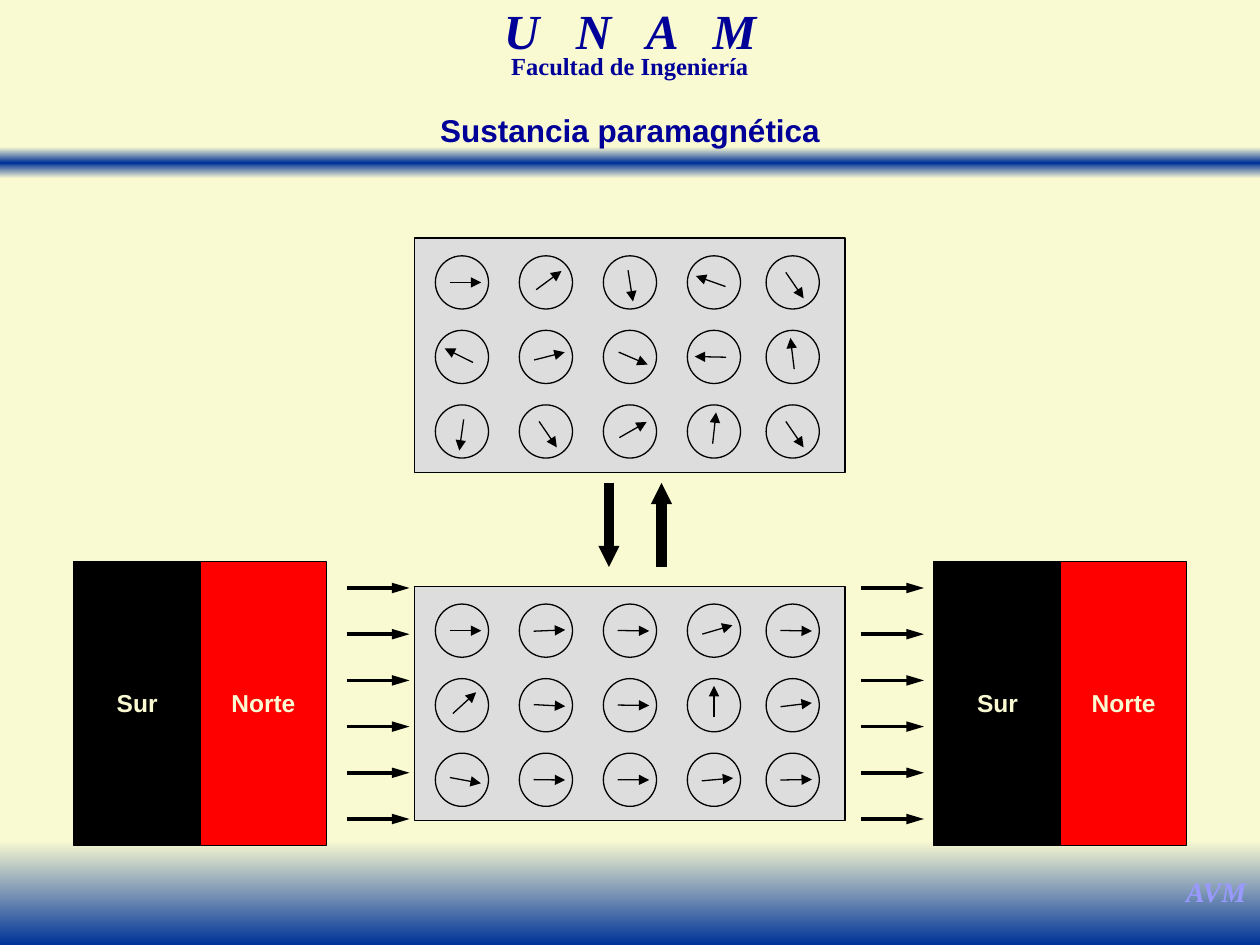
from copy import deepcopy
from math import cos, sin, radians
from lxml import etree
from pptx import Presentation
from pptx.dml.color import RGBColor as Rgb
from pptx.enum import shapes as kinds, text as txt
from pptx.oxml import ns
from pptx.util import Pt

HUE = {"cream": "FAFAD2", "blue": "003399", "navy": "000099", "lilac": "9999FF",
       "gray": "DDDDDD", "black": "000000", "red": "FF0000"}
RECT, OVAL = kinds.MSO_SHAPE.RECTANGLE, kinds.MSO_SHAPE.OVAL

deck = Presentation()
deck.slide_width, deck.slide_height = Pt(720), Pt(540)
slide = deck.slides.add_slide(deck.slide_layouts[6])
slide.background.fill.solid()
slide.background.fill.fore_color.rgb = Rgb.from_string(HUE["cream"])


def write(words, box, size, hue="navy", font="Times New Roman", slant=False,
          gap=None, pad=True, wrap=True):
    area = slide.shapes.add_textbox(*map(Pt, box))
    frame = area.text_frame
    frame.word_wrap = wrap
    if not pad:
        frame.margin_left = frame.margin_right = 0
        frame.margin_top = frame.margin_bottom = 0
    para = frame.paragraphs[0]
    para.alignment = txt.PP_ALIGN.CENTER
    if gap:
        para.line_spacing = gap
    run = para.add_run()
    run.text = words
    run.font.name, run.font.size = font, Pt(size)
    run.font.bold, run.font.italic = True, slant
    run.font.color.rgb = Rgb.from_string(HUE[hue])


def arrow(x1, y1, x2, y2, width=0.75, wide="med", long="med"):
    line = slide.shapes.add_connector(kinds.MSO_CONNECTOR.STRAIGHT,
                                      Pt(x1), Pt(y1), Pt(x2), Pt(y2))
    line.line.width = Pt(width)
    line.line.color.rgb = Rgb.from_string(HUE["black"])
    etree.SubElement(line.line._get_or_add_ln(), ns.qn("a:tailEnd"),
                     type="triangle", w=wide, len=long)
    etree.SubElement(line._element.spPr, ns.qn("a:effectLst"))


bands = [(84, 18, ["cream", "blue", "cream"]), (480, 60, ["cream", "blue"])]
for top, high, hues in bands:
    band = slide.shapes.add_shape(RECT, 0, Pt(top), Pt(720), Pt(high))
    band.shadow.inherit = False
    band.line.fill.background()
    band.fill.gradient()
    band.fill.gradient_angle = 270
    last = band._element.spPr.xpath(".//a:gs")[-1]
    for extra in hues[2:]:
        last.addnext(deepcopy(last))
    for i, stop in enumerate(band.fill.gradient_stops):
        stop.position = i / (len(hues) - 1)
        stop.color.rgb = Rgb.from_string(HUE[hues[i]])

write("U   N   A   M", (219, 6, 282, 31), 28, slant=True, gap=0.7)
write("Facultad de Ingeniería", (231, 30, 258, 19), 14, gap=0.7)
write("AVM", (670, 496, 50, 27), 16, "lilac", slant=True, wrap=False)
write("Sustancia paramagnética", (204, 60, 312, 29), 18, font="Arial")

cols = [264, 312, 360, 408, 453]
pitch, size = 42.6, 30.4
blocks = [
    (136, [[0, 323.5, 81, 199.6, 55.6],
           [206.3, 345.8, 23.2, 181.2, 263.2],
           [97.9, 55.6, 330.1, 276.2, 55.6]]),
    (335, [[0, 357.7, 0.8, 343.8, 1.1],
           [317.6, 3, 0.7, 270, 353.2],
           [10.5, 0.7, 0.5, 354.9, 359]]),
]
items = []
for left in (42, 533.6):
    items += [(RECT, (left, 321, 72.2, 162), "black"),
              (RECT, (left + 72.2, 321, 72.2, 162), "red")]
for top, grid in blocks:
    items.append((RECT, (237, top, 246, 134), "gray"))
    for row in range(len(grid)):
        y = top + 25.4 + row * pitch
        items += [(OVAL, (x - size / 2, y - size / 2, size, size), "gray")
                  for x in cols]
for kind, box, hue in items:
    shape = slide.shapes.add_shape(kind, *map(Pt, box))
    shape.shadow.inherit = False
    shape.fill.solid()
    shape.fill.fore_color.rgb = Rgb.from_string(HUE[hue])
    shape.line.color.rgb = Rgb.from_string(HUE["black"])
    shape.line.width = Pt(0.75)

for top, grid in blocks:
    for row, turns in enumerate(grid):
        y = top + 25.4 + row * pitch
        for x, turn in zip(cols, turns):
            dx, dy = cos(radians(turn)), sin(radians(turn))
            arrow(x - 7 * dx, y - 7 * dy, x + 11 * dx, y + 11 * dy)

for left in (42, 533.6):
    write("Sur", (left + 24.4, 393, 24, 17), 14, "cream", "Arial", pad=False, wrap=False)
    write("Norte", (left + 90, 393, 37, 17), 14, "cream", "Arial", pad=False, wrap=False)
for left in (198, 492):
    for i in range(6):
        y = 336 + i * 26.4
        arrow(left, y, left + 36, y, 2, long="lg")
arrow(348, 276, 348, 324, 6, "sm", "sm")
arrow(378, 324, 378, 276, 6, "sm", "sm")

deck.save("out.pptx")
